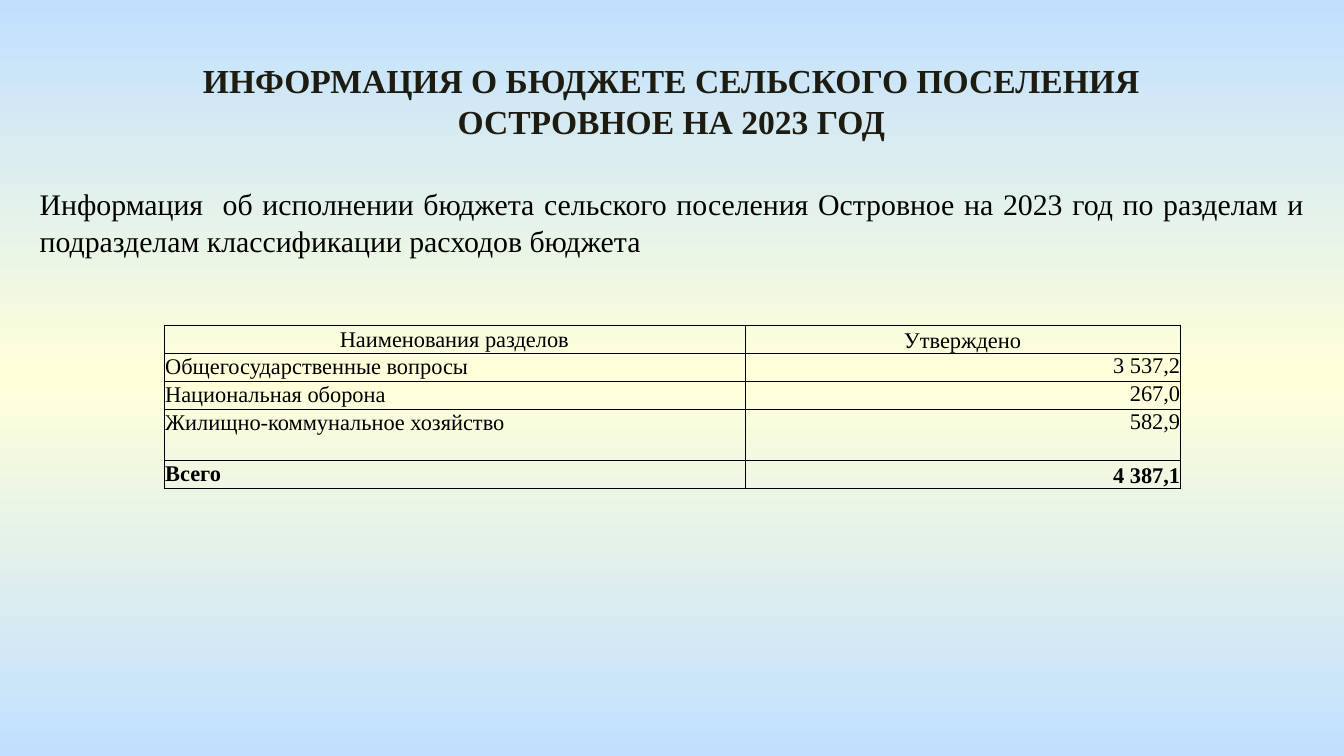
from copy import deepcopy
from dataclasses import dataclass

from lxml import etree
from pptx import Presentation
from pptx.dml.color import RGBColor
from pptx.enum import text
from pptx.oxml import ns
from pptx.util import Pt

ALIGN = text.PP_ALIGN
ANCHOR = text.MSO_ANCHOR


@dataclass(frozen=True)
class Theme:
    font: str = "Times New Roman"
    ink: str = "000000"
    heading: str = "1E1C11"
    sky: str = "C1E0FF"
    cream: str = "FFFFD9"
    title_size: float = 18
    body_size: float = 16
    table_size: float = 12
    border: float = 0.5
    spacing: float = 1.04


@dataclass(frozen=True)
class Box:
    left: float
    top: float
    width: float
    height: float


@dataclass(frozen=True)
class BudgetRow:
    name: str
    amount: str
    height: float = 14.75
    bold: bool = False
    header: bool = False
    name_anchor: ANCHOR = ANCHOR.TOP
    amount_anchor: ANCHOR = ANCHOR.TOP


THEME = Theme()
ROWS = [
    BudgetRow("Наименования разделов", "Утверждено", header=True,
              name_anchor=ANCHOR.MIDDLE, amount_anchor=ANCHOR.BOTTOM),
    BudgetRow("Общегосударственные вопросы", "3 537,2"),
    BudgetRow("Национальная оборона", "267,0"),
    BudgetRow("Жилищно-коммунальное хозяйство", "582,9", height=27.4),
    BudgetRow("Всего", "4 387,1", bold=True, amount_anchor=ANCHOR.BOTTOM),
]
COLUMNS = [311.2, 233.2]


def paint_background(s) -> None:
    fill = s.background.fill
    fill.gradient()
    fill.gradient_angle = 270
    stop_list = next(s.element.iter(ns.qn("a:gsLst")))
    stop_list.append(deepcopy(stop_list[0]))
    colors = [THEME.sky, THEME.cream, THEME.sky]
    for i, (stop, color) in enumerate(zip(fill.gradient_stops, colors)):
        stop.position = i / 2
        stop.color.rgb = RGBColor.from_string(color)


def write(tf, words: str, size: float, align: ALIGN,
          color: str = THEME.ink, bold: bool = False) -> None:
    tf.text = words
    p = tf.paragraphs[0]
    p.alignment = align
    font = p.runs[0].font
    font.name = THEME.font
    font.size = Pt(size)
    font.bold = bold
    font.color.rgb = RGBColor.from_string(color)


def place_text(sp, box: Box, words: str, size: float, align: ALIGN,
               color: str = THEME.ink, bold: bool = False) -> None:
    sp.left, sp.top = Pt(box.left), Pt(box.top)
    sp.width, sp.height = Pt(box.width), Pt(box.height)
    tf = sp.text_frame
    tf.word_wrap = True
    tf.auto_size = text.MSO_AUTO_SIZE.SHAPE_TO_FIT_TEXT
    tf.vertical_anchor = ANCHOR.TOP
    write(tf, words, size, align, color, bold)
    tf.paragraphs[0].line_spacing = THEME.spacing


def draw_borders(cell) -> None:
    props = cell._tc.get_or_add_tcPr()
    for i, side in enumerate(("lnL", "lnR", "lnT", "lnB")):
        line = etree.Element(ns.qn(f"a:{side}"), w=str(Pt(THEME.border)))
        solid = etree.SubElement(line, ns.qn("a:solidFill"))
        etree.SubElement(solid, ns.qn("a:srgbClr"), val=THEME.ink)
        props.insert(i, line)


def format_cell(cell, words: str, align: ALIGN, anchor: ANCHOR,
                bold: bool, inset: float) -> None:
    cell.margin_left = cell.margin_right = cell.margin_top = Pt(inset)
    cell.margin_bottom = Pt(0)
    cell.vertical_anchor = anchor
    cell.fill.background()
    write(cell.text_frame, words, THEME.table_size, align, bold=bold)
    draw_borders(cell)


def add_budget_table(s, left: float, top: float) -> None:
    height = sum(row.height for row in ROWS)
    table = s.shapes.add_table(len(ROWS), len(COLUMNS), Pt(left), Pt(top),
                               Pt(sum(COLUMNS)), Pt(height)).table
    table.first_row = table.horz_banding = False
    for column, width in zip(table.columns, COLUMNS):
        column.width = Pt(width)
    for i, row in enumerate(ROWS):
        table.rows[i].height = Pt(row.height)
        name_align = ALIGN.CENTER if row.header else ALIGN.LEFT
        amount_align = ALIGN.CENTER if row.header else ALIGN.RIGHT
        format_cell(table.cell(i, 0), row.name, name_align,
                    row.name_anchor, row.bold, 0.6)
        format_cell(table.cell(i, 1), row.amount, amount_align,
                    row.amount_anchor, row.bold, 0.6 if row.header else 0)


def main() -> None:
    prs = Presentation()
    prs.slide_width, prs.slide_height = Pt(720), Pt(405)
    s = prs.slides.add_slide(prs.slide_layouts[5])
    paint_background(s)
    place_text(s.shapes.title, Box(81.4, 27.4, 556.6, 51.1),
               "ИНФОРМАЦИЯ О БЮДЖЕТЕ СЕЛЬСКОГО ПОСЕЛЕНИЯ ОСТРОВНОЕ НА 2023 ГОД",
               THEME.title_size, ALIGN.CENTER, THEME.heading, True)
    intro = s.shapes.add_textbox(Pt(0), Pt(0), Pt(0), Pt(0))
    place_text(intro, Box(14.2, 95, 691.9, 46.1),
               "Информация  об исполнении бюджета сельского поселения Островное "
               "на 2023 год по разделам и подразделам классификации расходов бюджета",
               THEME.body_size, ALIGN.JUSTIFY)
    add_budget_table(s, 87.9, 174.2)
    prs.save("out.pptx")


if __name__ == "__main__":
    main()
